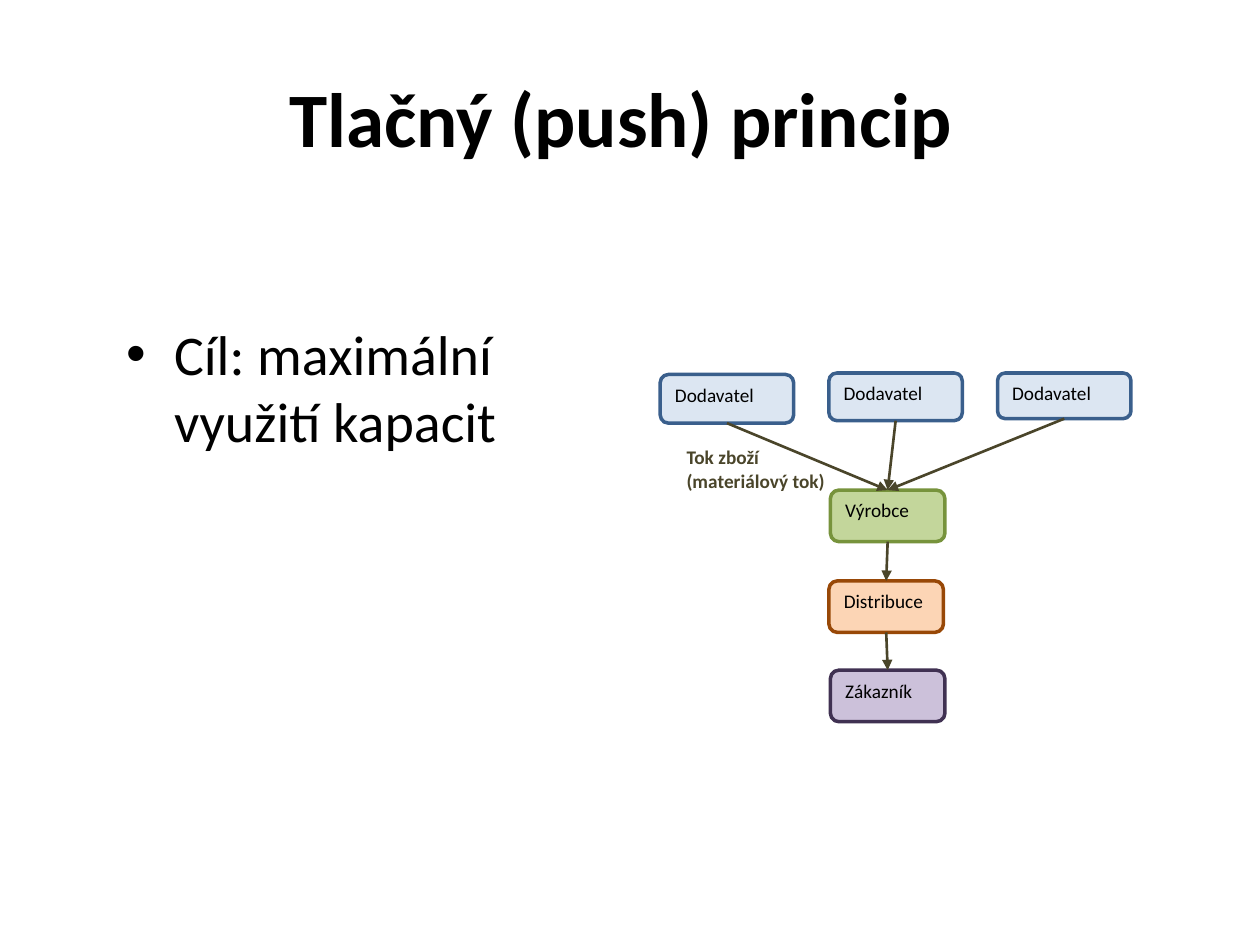
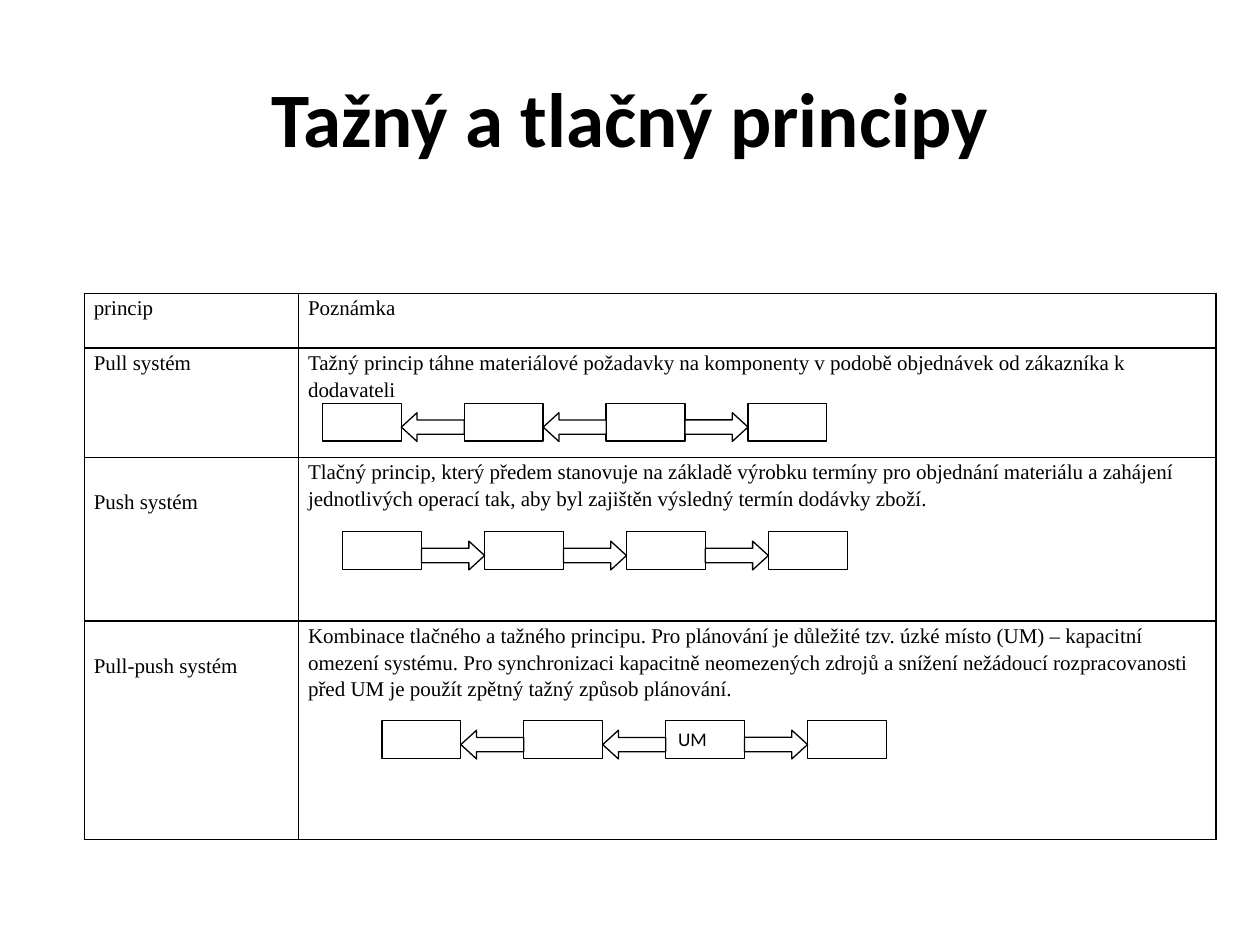
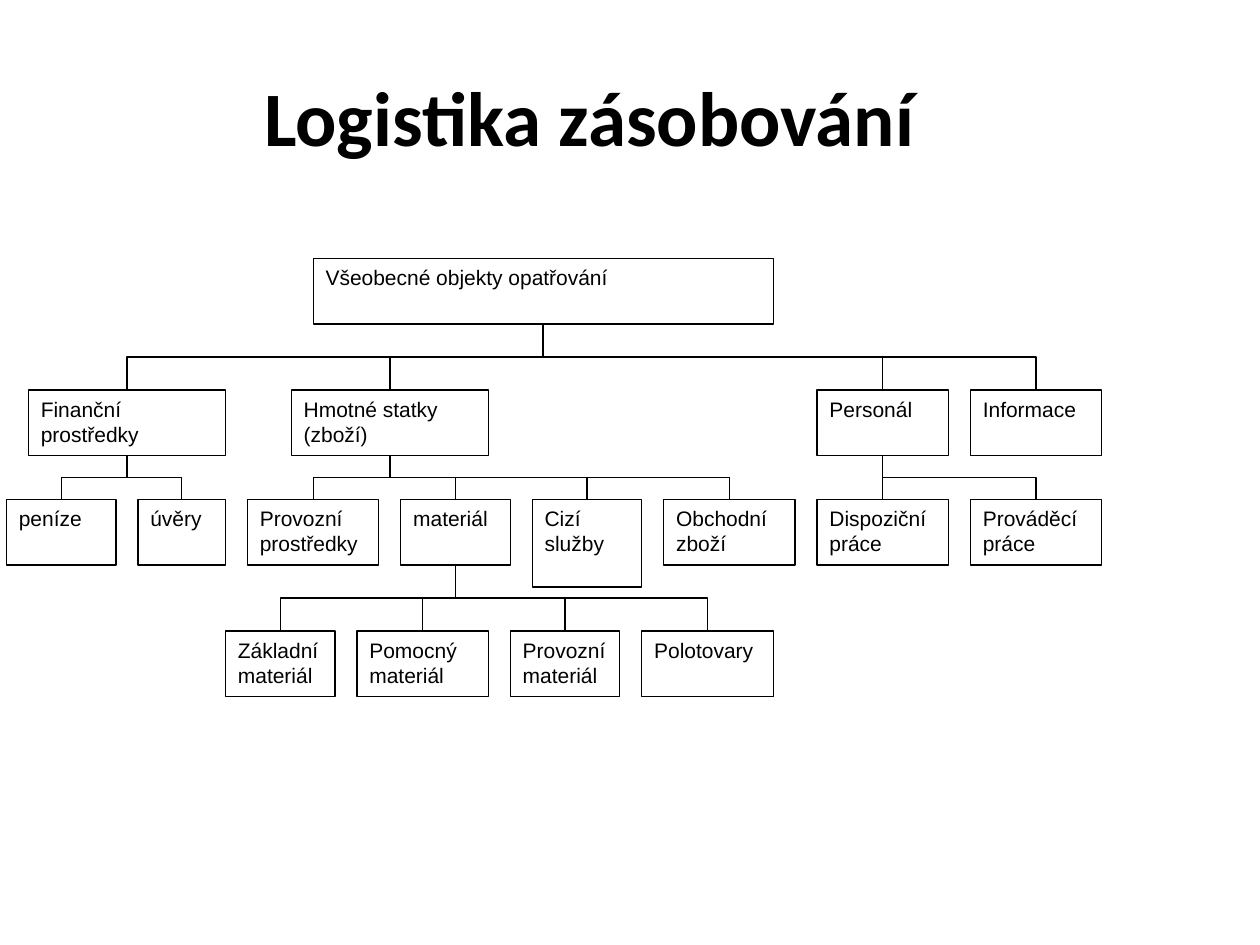
import dataclasses

import lxml.etree
import pptx
import pptx.dml.color
import pptx.enum.shapes
import pptx.enum.text
import pptx.oxml.ns
import pptx.util

Cm = pptx.util.Cm
Pt = pptx.util.Pt
qn = pptx.oxml.ns.qn
SHAPES = pptx.enum.shapes.MSO_SHAPE
CONNECTORS = pptx.enum.shapes.MSO_CONNECTOR
ALIGN = pptx.enum.text.PP_ALIGN
ANCHOR = pptx.enum.text.MSO_ANCHOR
TOP, BOTTOM = 0, 2


@dataclasses.dataclass(frozen=True)
class Theme:
    black: str = "000000"
    white: str = "FFFFFF"
    flow: str = "4A452A"
    supplier: tuple = ("DCE6F2", "3A5F8C")
    producer: tuple = ("C3D69B", "77933C")
    distribution: tuple = ("FCD5B5", "984807")
    customer: tuple = ("CCC1DA", "403152")
    main_font: str = "Calibri"
    table_font: str = "Times New Roman"
    tree_font: str = "Arial"
    title_size: float = 44
    body_size: float = 32
    small_size: float = 11
    text_size: float = 12
    thin_line: float = 0.75
    table_line: float = 1
    flow_line: float = 1.5
    stage_line: float = 2


THEME = Theme()

# Chain cells: left, top, labels of the boxes, directions of the arrows between them
CHAINS = [
    (6.5, 8.13, ["", "", "", ""], "<<>"),
    (6.91, 10.72, ["", "", "", ""], ">>>"),
    (7.7, 14.53, ["", "", "UM", ""], "<<>"),
]

PRINCIPLES = [
    ("princip", "Poznámka"),
    ("Pull systém",
     "Tažný princip táhne materiálové požadavky na komponenty v podobě objednávek "
     "od zákazníka k dodavateli"),
    ("Push systém",
     "Tlačný princip, který předem stanovuje na základě výrobku termíny pro objednání "
     "materiálu a zahájení jednotlivých operací tak, aby byl zajištěn výsledný termín "
     "dodávky zboží."),
    ("Pull-push systém",
     "Kombinace tlačného a tažného principu. Pro plánování je důležité tzv. úzké místo "
     "(UM) – kapacitní omezení systému. Pro synchronizaci kapacitně neomezených zdrojů "
     "a snížení nežádoucí rozpracovanosti před UM je použít zpětný tažný způsob plánování."),
]

# Tree boxes: text, column, row, width, height in grid steps, and the parent's text
GRID_STEP = Cm(5.3) / 12
PROCUREMENT_TREE = [
    ("Všeobecné objekty opatřování", 14, 0, 21, 3, None),
    ("Finanční prostředky", 1, 6, 9, 3, "Všeobecné objekty opatřování"),
    ("Hmotné statky (zboží)", 13, 6, 9, 3, "Všeobecné objekty opatřování"),
    ("Personál", 37, 6, 6, 3, "Všeobecné objekty opatřování"),
    ("Informace", 44, 6, 6, 3, "Všeobecné objekty opatřování"),
    ("peníze", 0, 11, 5, 3, "Finanční prostředky"),
    ("úvěry", 6, 11, 4, 3, "Finanční prostředky"),
    ("Provozní prostředky", 11, 11, 6, 3, "Hmotné statky (zboží)"),
    ("materiál", 18, 11, 5, 3, "Hmotné statky (zboží)"),
    ("Cizí služby", 24, 11, 5, 4, "Hmotné statky (zboží)"),
    ("Obchodní zboží", 30, 11, 6, 3, "Hmotné statky (zboží)"),
    ("Dispoziční práce", 37, 11, 6, 3, "Personál"),
    ("Prováděcí práce", 44, 11, 6, 3, "Personál"),
    ("Základní materiál", 10, 17, 5, 3, "materiál"),
    ("Pomocný materiál", 16, 17, 6, 3, "materiál"),
    ("Provozní materiál", 23, 17, 5, 3, "materiál"),
    ("Polotovary", 29, 17, 6, 3, "materiál"),
]


def rgb(colour):
    return pptx.dml.color.RGBColor.from_string(colour)


def format_runs(paragraph, font, size, colour=THEME.black, bold=False):
    for run in paragraph.runs:
        run.font.name = font
        run.font.size = Pt(size)
        run.font.color.rgb = rgb(colour)
        run.font.bold = bold


def add_titled_slide(presentation, title, left=1.27, top=0.76, width=22.86, height=3.18):
    slide = presentation.slides.add_slide(presentation.slide_layouts[5])
    shape = slide.shapes.title
    shape.left, shape.top, shape.width, shape.height = map(Cm, (left, top, width, height))
    frame = shape.text_frame
    frame.text = title
    frame.auto_size = pptx.enum.text.MSO_AUTO_SIZE.NONE
    frame.vertical_anchor = ANCHOR.MIDDLE
    frame.paragraphs[0].alignment = ALIGN.CENTER
    format_runs(frame.paragraphs[0], THEME.main_font, THEME.title_size, bold=True)
    return slide


def add_text(slide, text, position, size, colour=THEME.black, bold=False):
    frame = slide.shapes.add_textbox(*map(Cm, position)).text_frame
    frame.word_wrap = True
    frame.text = text
    format_runs(frame.paragraphs[0], THEME.main_font, size, colour, bold)
    return frame.paragraphs[0]


def add_bullet(paragraph):
    properties = paragraph._p.get_or_add_pPr()
    properties.set("marL", str(Cm(0.95)))
    properties.set("indent", str(-Cm(0.95)))
    lxml.etree.SubElement(properties, qn("a:buFont"), typeface="Arial")
    lxml.etree.SubElement(properties, qn("a:buChar"), char="•")


def add_box(slide, kind, position, text="", colours=(THEME.white, THEME.black),
            line_width=THEME.thin_line, font=THEME.main_font, size=THEME.small_size):
    """Add a filled, outlined shape with text at its top left; position is in EMU."""
    shape = slide.shapes.add_shape(kind, *map(round, position))
    shape.shadow.inherit = False
    fill, line = colours
    shape.fill.solid()
    shape.fill.fore_color.rgb = rgb(fill)
    shape.line.color.rgb = rgb(line)
    shape.line.width = Pt(line_width)
    if text:
        frame = shape.text_frame
        frame.text = text
        frame.word_wrap = True
        frame.vertical_anchor = ANCHOR.TOP
        frame.paragraphs[0].alignment = ALIGN.LEFT
        format_runs(frame.paragraphs[0], font, size)
    return shape


def connect(slide, upper, lower, kind, colour, width):
    """Join the bottom of the upper box to the top of the lower one."""
    connector = slide.shapes.add_connector(kind, 0, 0, 0, 0)
    connector.begin_connect(upper, BOTTOM)
    connector.end_connect(lower, TOP)
    connector.line.color.rgb = rgb(colour)
    connector.line.width = Pt(width)
    lxml.etree.SubElement(connector._element.spPr, qn("a:effectLst"))
    return connector


def add_flow_arrow(slide, upper, lower):
    connector = connect(slide, upper, lower, CONNECTORS.STRAIGHT, THEME.flow, THEME.flow_line)
    line = connector._element.spPr.find(qn("a:ln"))
    lxml.etree.SubElement(line, qn("a:tailEnd"), type="triangle")


def add_branch(slide, parent, child):
    """Draw a tree branch: down, across and down, or straight down."""
    start_x, end_x = (box.left + box.width // 2 for box in (parent, child))
    start_y, end_y = parent.top + parent.height, child.top
    across, down = end_x - start_x, end_y - start_y
    kind = CONNECTORS.ELBOW if across else CONNECTORS.STRAIGHT
    connector = connect(slide, parent, child, kind, THEME.black, THEME.thin_line)
    if not across:
        return
    # A bent connector leaves sideways, so its frame is turned a quarter to leave downwards.
    connector.width, connector.height = down, abs(across)
    connector.left = (start_x + end_x - down) // 2
    connector.top = (start_y + end_y - abs(across)) // 2
    frame = connector._element.spPr.find(qn("a:xfrm"))
    for name in ("flipH", "flipV"):
        frame.attrib.pop(name, None)
    frame.set("rot", str((90 if across < 0 else 270) * 60000))
    if across > 0:
        frame.set("flipH", "1")


def add_chain(slide, left, top, labels, directions):
    box_width, arrow_width = 1.59, 1.27
    step = box_width + arrow_width
    for index, label in enumerate(labels):
        position = map(Cm, (left + index * step, top, box_width, 0.76))
        add_box(slide, SHAPES.RECTANGLE, position, label)
    for index, direction in enumerate(directions):
        position = map(Cm, (left + index * step + box_width, top + 0.19, arrow_width, 0.58))
        arrow = add_box(slide, SHAPES.RIGHT_ARROW, position)
        arrow.adjustments[1] = 0.545
        arrow.rotation = 180 if direction == "<" else 0


def format_cell(cell, text, margin_top):
    cell.margin_left = cell.margin_right = Cm(0.19)
    cell.margin_top, cell.margin_bottom = Cm(margin_top), 0
    cell.text_frame.text = text
    paragraph = cell.text_frame.paragraphs[0]
    paragraph.line_spacing = 1.15
    format_runs(paragraph, THEME.table_font, THEME.text_size)
    properties = cell._tc.get_or_add_tcPr()
    for side in ("a:lnL", "a:lnR", "a:lnT", "a:lnB"):
        border = lxml.etree.SubElement(properties, qn(side), w=str(Pt(THEME.table_line)))
        fill = lxml.etree.SubElement(border, qn("a:solidFill"))
        lxml.etree.SubElement(fill, qn("a:srgbClr"), val=THEME.black)
    cell.fill.background()


def add_principles_table(slide):
    column_widths, row_unit = (4.32, 18.49), 1.1
    row_heights = [row_unit * count for count in range(1, len(PRINCIPLES) + 1)]
    table = slide.shapes.add_table(
        len(PRINCIPLES), len(column_widths), Cm(1.7), Cm(5.92),
        Cm(sum(column_widths)), Cm(sum(row_heights))).table
    table.first_row = table.horz_banding = False
    for column, width in zip(table.columns, column_widths):
        column.width = Cm(width)
    for row_index, (name, note) in enumerate(PRINCIPLES):
        table.rows[row_index].height = Cm(row_heights[row_index])
        name_margin = 0.6 if row_index >= 2 else 0
        format_cell(table.cell(row_index, 0), name, name_margin)
        format_cell(table.cell(row_index, 1), note, 0)


def build_push_slide(presentation):
    slide = add_titled_slide(presentation, "Tlačný (push) princip ")
    add_bullet(add_text(slide, "Cíl: maximální využití kapacit",
                        (2.31, 6.32, 10.59, 10.8), THEME.body_size))

    def add_stage(text, colours, *position):
        return add_box(slide, SHAPES.ROUNDED_RECTANGLE, map(Cm, position), text,
                       colours, THEME.stage_line)

    suppliers = [
        add_stage("Dodavatel", THEME.supplier, 13.31 + 3.4 * index, top, 2.69, height)
        for index, (top, height) in enumerate([(7.55, 0.98), (7.52, 0.96), (7.52, 0.92)])
    ]
    producer = add_stage("Výrobce", THEME.producer, 16.74, 9.88, 2.31, 1.04)
    distribution = add_stage("Distribuce", THEME.distribution, 16.71, 11.71, 2.31, 1.04)
    customer = add_stage("Zákazník", THEME.customer, 16.74, 13.51, 2.31, 1.04)
    for supplier in suppliers:
        add_flow_arrow(slide, supplier, producer)
    add_flow_arrow(slide, producer, distribution)
    add_flow_arrow(slide, distribution, customer)
    add_text(slide, "Tok zboží (materiálový tok)", (13.59, 8.86, 3.35, 2.57),
             THEME.small_size, THEME.flow, bold=True)


def build_principles_slide(presentation):
    slide = add_titled_slide(presentation, "Tažný a tlačný principy")
    add_principles_table(slide)
    for chain in CHAINS:
        add_chain(slide, *chain)


def build_procurement_slide(presentation):
    slide = add_titled_slide(presentation, "Logistika zásobování", 1.09, 0.18, 21.59, 4.06)
    frame = slide.shapes.title.text_frame
    frame.margin_left = frame.margin_right = frame.margin_bottom = 0
    frame.margin_top = Cm(0.08)
    frame.paragraphs[0].line_spacing = Pt(58)
    boxes = {}
    for text, column, row, width, height, _ in PROCUREMENT_TREE:
        position = (Cm(0.13) + column * GRID_STEP, Cm(5.21) + row * GRID_STEP,
                    width * GRID_STEP, height * GRID_STEP)
        boxes[text] = add_box(slide, SHAPES.RECTANGLE, position, text,
                              font=THEME.tree_font, size=THEME.text_size)
    for text, *_, parent in PROCUREMENT_TREE:
        if parent:
            add_branch(slide, boxes[parent], boxes[text])


def main():
    presentation = pptx.Presentation()
    presentation.slide_width, presentation.slide_height = Cm(25.4), Cm(19.05)
    build_push_slide(presentation)
    build_principles_slide(presentation)
    build_procurement_slide(presentation)
    presentation.save("out.pptx")


if __name__ == "__main__":
    main()
